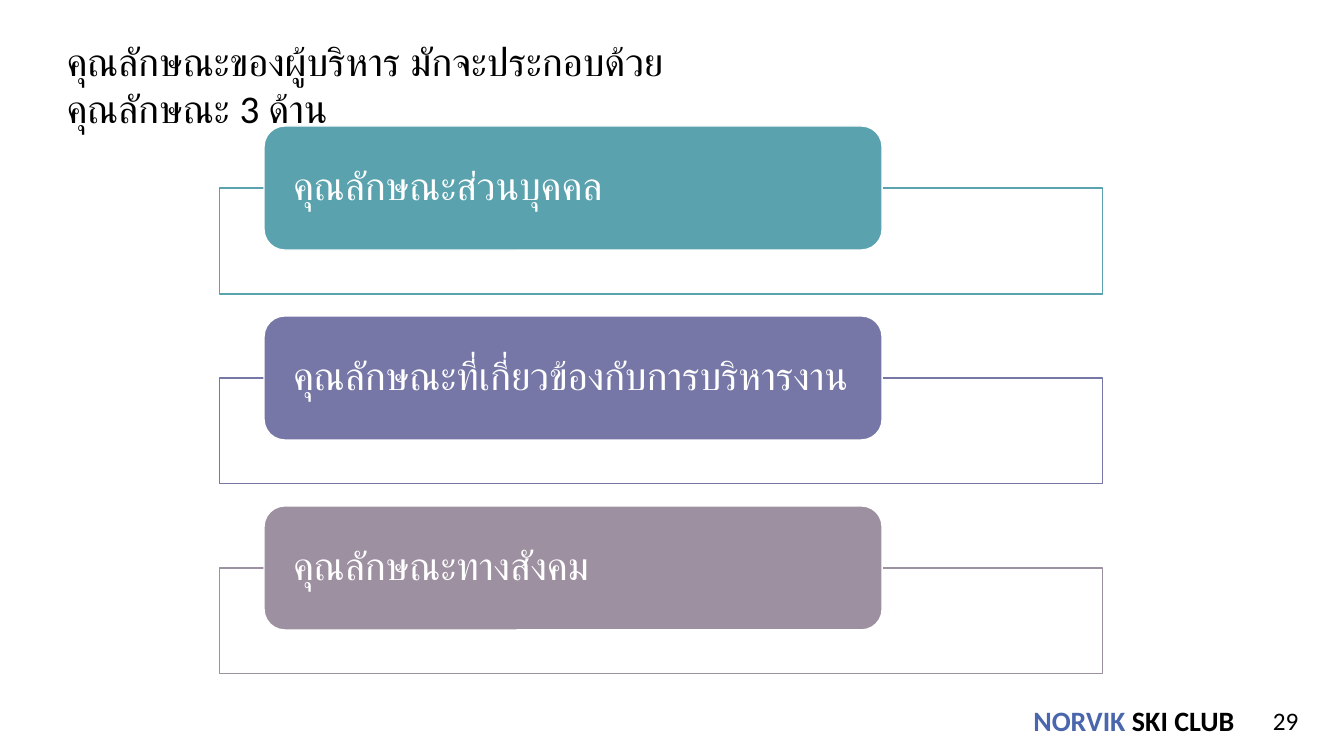
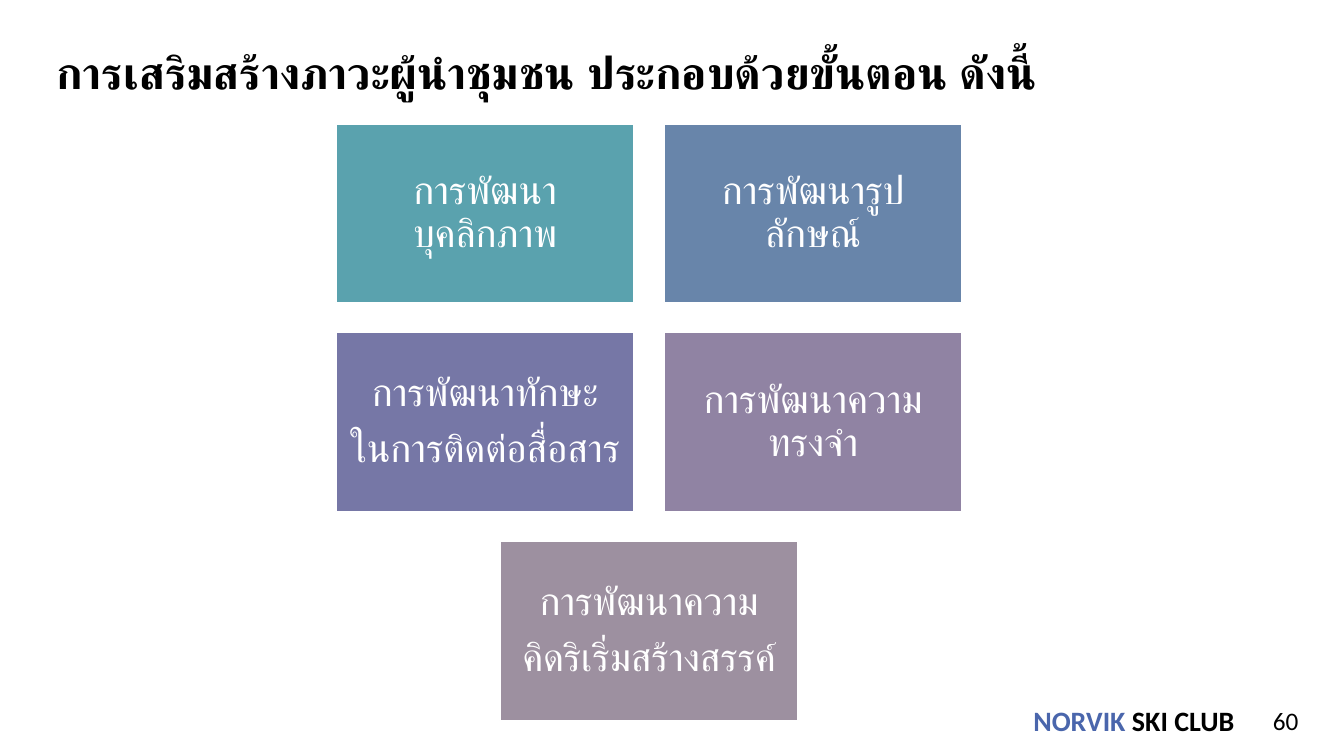
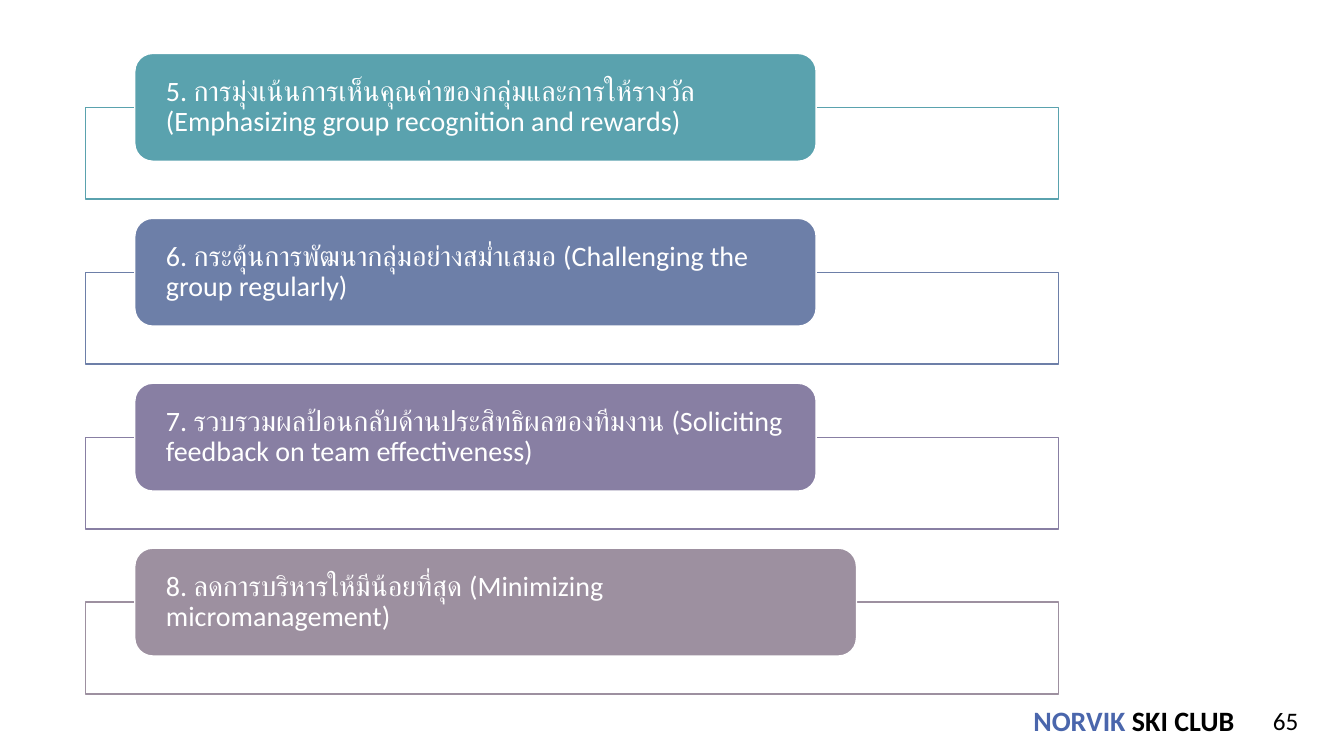
"""Build three slides on leadership traits, leadership growth and team building."""
import lxml.etree
import pptx
import pptx.dml.color
import pptx.enum.shapes
import pptx.enum.text
import pptx.oxml.ns
import pptx.util

Pt = pptx.util.Pt
SHAPE = pptx.enum.shapes.MSO_SHAPE
ALIGN = pptx.enum.text.PP_ALIGN
ANCHOR = pptx.enum.text.MSO_ANCHOR
FONT = "Calibri"
WHITE, BLACK, BRAND_BLUE = "FFFFFF", "000000", "4A66AC"
TEAL, VIOLET, MAUVE = "5AA2AE", "7677A6", "9D90A0"


def color(hex_code):
    return pptx.dml.color.RGBColor.from_string(hex_code)


def add_block(slide, kind, box, fill, line, lines=(), size=28, align=ALIGN.LEFT, insets=(0, 0)):
    block = slide.shapes.add_shape(kind, *[Pt(length) for length in box])
    block.shadow.inherit = False
    block.fill.solid()
    block.fill.fore_color.rgb = color(fill)
    block.line.color.rgb = color(line)
    block.line.width = Pt(1)
    frame = block.text_frame
    frame.word_wrap = True
    frame.vertical_anchor = ANCHOR.MIDDLE
    frame.margin_left = frame.margin_right = Pt(insets[0])
    frame.margin_top = frame.margin_bottom = Pt(insets[1])
    for index, text in enumerate(lines):
        paragraph = frame.add_paragraph() if index else frame.paragraphs[0]
        paragraph.text = text
        paragraph.alignment = align
        paragraph.line_spacing = 0.9
        paragraph.space_after = Pt(size * 0.35)
        paragraph.font.name = FONT
        paragraph.font.size = Pt(size)
        paragraph.font.color.rgb = color(WHITE)
    return block


deck = pptx.Presentation()
deck.slide_width, deck.slide_height = Pt(960), Pt(540)
title_only, blank = deck.slide_layouts[5], deck.slide_layouts[6]
traits, growth, teamwork = [deck.slides.add_slide(layout) for layout in (title_only, title_only, blank)]

brand = traits.shapes.add_textbox(Pt(736.6), Pt(501.1), Pt(157), Pt(27.4))
brand_frame = brand.text_frame
brand_frame.word_wrap = True
brand_frame.vertical_anchor = ANCHOR.MIDDLE
brand_frame.margin_left = brand_frame.margin_right = Pt(1.5)
brand_frame.margin_top = brand_frame.margin_bottom = Pt(1.5)
brand_line = brand_frame.paragraphs[0]
brand_line.font.name = FONT
brand_line.font.size = Pt(20)
brand_line.font.bold = True
for word, word_color in (("NORVIK", BRAND_BLUE), (" SKI CLUB", BLACK)):
    run = brand_line.add_run()
    run.text = word
    run.font.color.rgb = color(word_color)
deck.slide_master.shapes.element.append(brand.element)

for slide, number in ((traits, "29"), (growth, "60"), (teamwork, "65")):
    page = slide.shapes.add_textbox(Pt(894.2), Pt(500.4), Pt(40.3), Pt(28.8))
    page.text_frame.word_wrap = True
    page_line = page.text_frame.paragraphs[0]
    page_line.text = number
    page_line.alignment = ALIGN.RIGHT
    page_line.font.name = FONT
    page_line.font.size = Pt(18)
    page_line.font.color.rgb = color(BLACK)

headings = (
    (traits, "คุณลักษณะของผู้บริหาร มักจะประกอบด้วยคุณลักษณะ 3 ด้าน", (40.3, 23, 553.7, 41), 28, False),
    (growth, "การเสริมสร้างภาวะผู้นำชุมชน ประกอบด้วยขั้นตอน ดังนี้", (33.1, 28.1, 860.4, 46.1), 32, True),
)
for slide, text, box, size, bold in headings:
    heading = slide.shapes.title
    heading.left, heading.top, heading.width, heading.height = [Pt(length) for length in box]
    heading.text_frame.text = text
    heading.text_frame.word_wrap = True
    heading.text_frame.auto_size = pptx.enum.text.MSO_AUTO_SIZE.NONE
    heading.text_frame.vertical_anchor = ANCHOR.TOP
    heading_line = heading.text_frame.paragraphs[0]
    heading_line.alignment = ALIGN.LEFT
    heading_line.font.name = FONT
    heading_line.font.size = Pt(size)
    heading_line.font.bold = bold
    heading_line.font.color.rgb = color(BLACK)

trait_rows = (
    ("คุณลักษณะส่วนบุคคล", TEAL, 441.5),
    ("คุณลักษณะที่เกี่ยวข้องกับการบริหารงาน", VIOLET, 441.5),
    ("คุณลักษณะทางสังคม", MAUVE, 441.5),
)
teamwork_rows = (
    ("5. การมุ่งเน้นการเห็นคุณค่าของกลุ่มและการให้รางวัล (Emphasizing group recognition and rewards)", TEAL, 486.7),
    ("6. กระตุ้นการพัฒนากลุ่มอย่างสม่ำเสมอ (Challenging the group regularly)", "6D7FA8", 486.7),
    ("7. รวบรวมผลป้อนกลับด้านประสิทธิผลของทีมงาน (Soliciting feedback on team effectiveness)", "887FA3", 486.7),
    ("8. ลดการบริหารให้มีน้อยที่สุด (Minimizing micromanagement)", MAUVE, 515.5),
)
row_lists = (
    (traits, trait_rows, 28, 90, 135.7, 188.6, 88.6, (157, 630.7, 75.6), 16.5),
    (teamwork, teamwork_rows, 20, 38.2, 117.8, 96.3, 77, (61.2, 695, 65.5), 18.5),
)
for slide, rows, size, first_top, pitch, tab_left, tab_height, outline, inset in row_lists:
    outline_left, outline_width, outline_height = outline
    for index, (text, tint, tab_width) in enumerate(rows):
        top = first_top + index * pitch
        outline_box = (outline_left, top + tab_height / 2, outline_width, outline_height)
        panel = add_block(slide, SHAPE.RECTANGLE, outline_box, WHITE, tint)
        panel_color = panel.element.spPr.find(".//" + pptx.oxml.ns.qn("a:srgbClr"))
        lxml.etree.SubElement(panel_color, pptx.oxml.ns.qn("a:alpha"), val="90000")
        tab_box = (tab_left, top, tab_width, tab_height)
        add_block(slide, SHAPE.ROUNDED_RECTANGLE, tab_box, tint, WHITE, [text], size, insets=(inset, 0))

steps = (
    (["การพัฒนาบุคลิกภาพ"], TEAL),
    (["การพัฒนารูปลักษณ์"], "6885AA"),
    (["การพัฒนาทักษะ", "ในการติดต่อสื่อสาร"], VIOLET),
    (["การพัฒนาความทรงจำ"], "9083A3"),
    (["การพัฒนาความ", "คิดริเริ่มสร้างสรรค์"], MAUVE),
)
card_width, card_height, gap = 213, 127.8, 21.3
grid_left, grid_top, columns = 240, 88.5, 2
for index, (lines, tint) in enumerate(steps):
    row, column = divmod(index, columns)
    in_row = min(columns, len(steps) - row * columns)
    left = grid_left + (column + (columns - in_row) / 2) * (card_width + gap)
    card_box = (left, grid_top + row * (card_height + gap), card_width, card_height)
    add_block(growth, SHAPE.RECTANGLE, card_box, tint, WHITE, lines, 28, ALIGN.CENTER, (8.4, 8.4))

deck.save("out.pptx")
